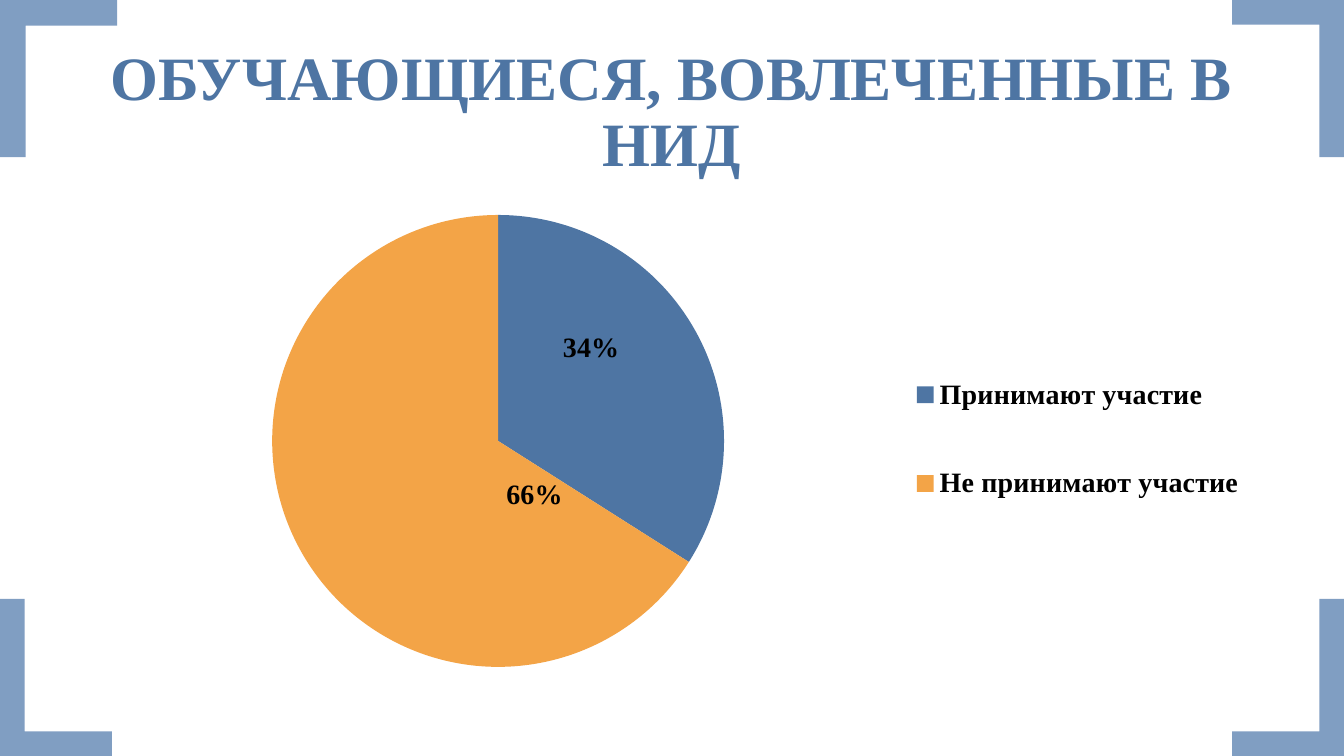
"""Builds a slide with a pie chart of students involved in research."""
from lxml.etree import SubElement
from pptx import Presentation
from pptx.chart.data import CategoryChartData
from pptx.dml.color import RGBColor
from pptx.enum.chart import XL_CHART_TYPE, XL_LABEL_POSITION, XL_LEGEND_POSITION
from pptx.enum.text import MSO_ANCHOR, MSO_AUTO_SIZE, PP_ALIGN
from pptx.oxml.ns import qn
from pptx.util import Cm, Pt

COLORS = {"blue": "4E75A3", "orange": "F3A447", "corner": "809EC2", "black": "000000"}
TITLE = "ОБУЧАЮЩИЕСЯ, ВОВЛЕЧЕННЫЕ В НИД"
SLICES = [
    ("Принимают участие", 0.34, "blue", {"x": -0.005, "y": -0.08}),
    ("Не принимают участие", 0.66, "orange", {"x": 0.117, "y": 0}),
]
CORNERS = [
    ("left", "bottom", 2.82),
    ("right", "top", 2.82),
    ("right", "bottom", 2.82),
    ("left", "top", 2.95),
]
SLIDE_W, SLIDE_H, CORNER_H, ARM_RATIO = 33.87, 19.05, 3.96, 0.22
TITLE_BOX = (2.33, 1.02, 29.21, 3.68)
CHART_BOX = (2.33, 5.08, 29.21, 12.09)
PLOT_LAYOUT = {"x": 0.155, "y": 0.028, "w": 0.39, "h": 0.942}
LEGEND_LAYOUT = {"x": 0.7, "y": 0.25, "w": 0.3, "h": 0.49}
TITLE_FONT = {"name": "Times New Roman", "size": Pt(44), "bold": True}
LABEL_FONT = {"name": "Times New Roman", "size": Pt(20), "bold": True}
CHART_FONT = {"name": "Calibri", "size": Pt(18)}


def rgb(name):
    return RGBColor.from_string(COLORS[name])


def set_font(font, values, color):
    for key, value in values.items():
        setattr(font, key, value)
    font.color.rgb = rgb(color)


def set_layout(parent, index, values, inner=False):
    for old in parent.findall(qn("c:layout")):
        parent.remove(old)
    layout = SubElement(parent, qn("c:layout"))
    parent.insert(index, layout)
    manual = SubElement(layout, qn("c:manualLayout"))
    if inner:
        SubElement(manual, qn("c:layoutTarget")).set("val", "inner")
    if "w" in values:
        for mode in ("xMode", "yMode"):
            SubElement(manual, qn(f"c:{mode}")).set("val", "edge")
    for key, value in values.items():
        SubElement(manual, qn(f"c:{key}")).set("val", str(value))


def add_corner(slide, side, edge, width):
    arm = ARM_RATIO * width
    outline = [(0, 0), (width, 0), (width, arm), (arm, arm), (arm, CORNER_H), (0, CORNER_H)]
    points = [(Cm(x if side == "left" else SLIDE_W - x),
               Cm(y if edge == "top" else SLIDE_H - y)) for x, y in outline]
    builder = slide.shapes.build_freeform(*points[0])
    builder.add_line_segments(points[1:], close=True)
    sp = builder.convert_to_shape()
    sp.shadow.inherit = False
    sp.fill.solid()
    sp.fill.fore_color.rgb = rgb("corner")
    sp.line.fill.background()


def add_title(slide):
    title = slide.shapes.title
    title.left, title.top, title.width, title.height = map(Cm, TITLE_BOX)
    tf = title.text_frame
    tf.word_wrap = True
    tf.auto_size = MSO_AUTO_SIZE.NONE
    tf.vertical_anchor = MSO_ANCHOR.MIDDLE
    p = tf.paragraphs[0]
    p.alignment = PP_ALIGN.CENTER
    p.line_spacing = 0.9
    r = p.add_run()
    r.text = TITLE
    set_font(r.font, TITLE_FONT, "blue")


def add_pie(slide):
    data = CategoryChartData(number_format="0%")
    data.categories = [name for name, *_ in SLICES]
    data.add_series("Series 1", [value for _, value, *_ in SLICES])
    chart = slide.shapes.add_chart(
        XL_CHART_TYPE.PIE, *map(Cm, CHART_BOX), data).chart
    chart.has_title = False
    set_font(chart.font, CHART_FONT, "black")

    chart.has_legend = True
    legend = chart.legend
    legend.position = XL_LEGEND_POSITION.RIGHT
    legend.include_in_layout = False
    set_font(legend.font, LABEL_FONT, "black")
    chart_xml = chart.element.find(qn("c:chart"))
    set_layout(chart_xml.find(qn("c:legend")), 1, LEGEND_LAYOUT)
    set_layout(chart_xml.find(qn("c:plotArea")), 0, PLOT_LAYOUT, inner=True)

    plot = chart.plots[0]
    plot.vary_by_categories = True
    series = plot.series[0]
    labels = series.data_labels
    labels.show_value = True
    labels.number_format = "0%"
    labels.number_format_is_linked = False
    set_font(labels.font, LABEL_FONT, "black")
    for i, (_, _, color, _) in enumerate(SLICES):
        point = series.points[i]
        point.format.fill.solid()
        point.format.fill.fore_color.rgb = rgb(color)
        point.format.line.fill.background()
        set_font(point.data_label.font, LABEL_FONT, "black")
        point.data_label.position = XL_LABEL_POSITION.CENTER
    for label, (*_, offset) in zip(chart_xml.iter(qn("c:dLbl")), SLICES):
        set_layout(label, 1, offset)


def main():
    prs = Presentation()
    prs.slide_width, prs.slide_height = Cm(SLIDE_W), Cm(SLIDE_H)
    slide = prs.slides.add_slide(prs.slide_layouts[5])
    for corner in CORNERS:
        add_corner(slide, *corner)
    add_title(slide)
    add_pie(slide)
    prs.save("out.pptx")


if __name__ == "__main__":
    main()
